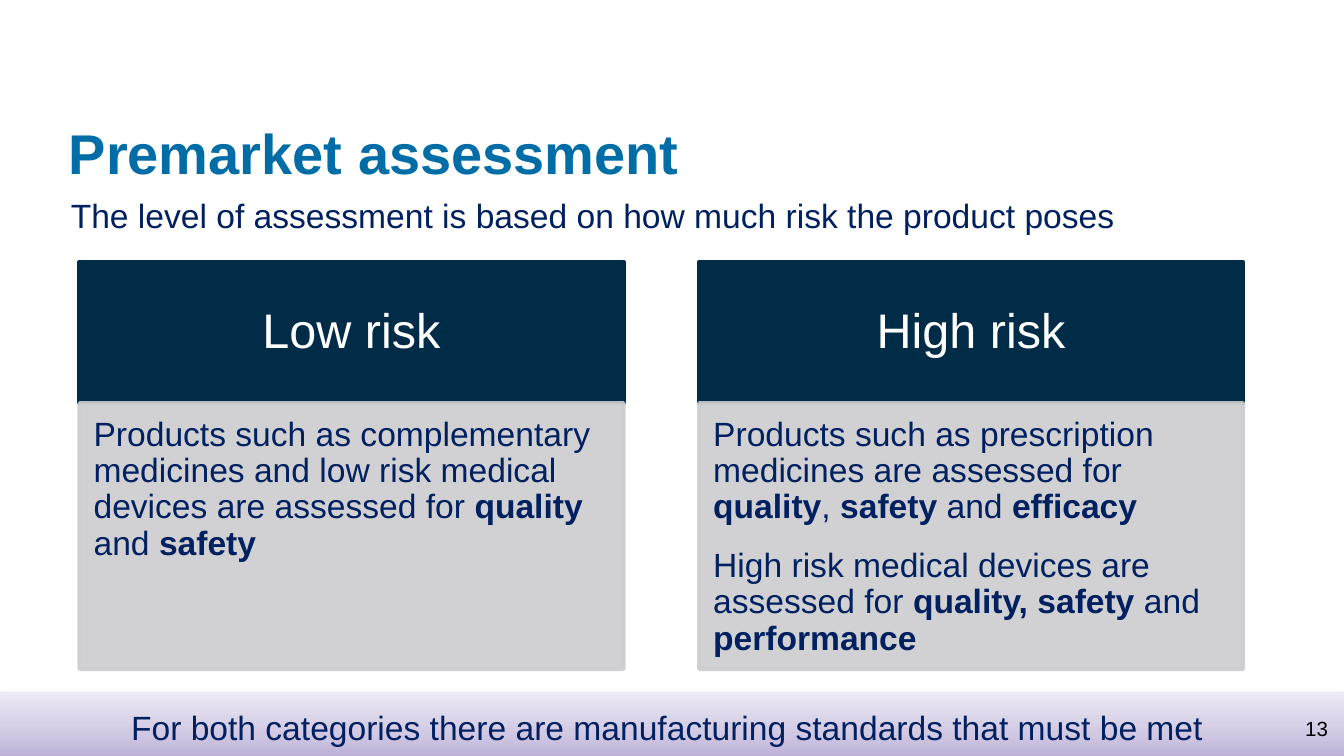
from lxml.etree import SubElement
from pptx import Presentation
from pptx.dml.color import RGBColor
from pptx.enum.shapes import MSO_SHAPE as Shape
from pptx.enum.text import MSO_ANCHOR as Anchor, PP_ALIGN as Align
from pptx.oxml.ns import qn
from pptx.util import Cm, Pt

BLUE = RGBColor(0x00, 0x6D, 0xA7)
NAVY = RGBColor(0x00, 0x20, 0x60)
DARK = RGBColor(0x00, 0x2C, 0x47)
GREY = RGBColor(0xCC, 0xCD, 0xCF)
WHITE = RGBColor(0xFF, 0xFF, 0xFF)
BLACK = RGBColor(0x00, 0x00, 0x00)
BAR_STOPS = [
    (0, RGBColor(0xBD, 0xB1, 0xD8)),
    (35, RGBColor(0xD1, 0xC9, 0xE3)),
    (100, RGBColor(0xED, 0xEA, 0xF5)),
]

SLIDE_W, SLIDE_H = 25.4, 14.29
CARD_X, CARD_Y, CARD_W, CARD_STEP = 1.5, 4.95, 10.29, 11.71
HEAD_H, BODY_H = 2.67, 5.03
BAR_Y = 13.08

# Paragraphs are lists of (text, bold) runs.
CARDS = [
    ("Low risk", [
        [("Products such as complementary medicines and low risk medical "
          "devices are assessed for ", False),
         ("quality", True), (" and ", False), ("safety", True)],
    ]),
    ("High risk", [
        [("Products such as prescription medicines are assessed for ", False),
         ("quality", True), (", ", False), ("safety", True),
         (" and ", False), ("efficacy", True)],
        [("High risk medical devices are assessed for ", False),
         ("quality, safety ", True), ("and ", False), ("performance", True)],
    ]),
]


def set_alpha(fill, percent):
    color = fill._xPr.find(qn("a:solidFill"))[0]
    SubElement(color, qn("a:alpha"), val=str(percent * 1000))


class Deck:
    font = "Arial"

    def __init__(self):
        self.prs = Presentation()
        self.prs.slide_width = Cm(SLIDE_W)
        self.prs.slide_height = Cm(SLIDE_H)
        self.slide = self.prs.slides.add_slide(self.prs.slide_layouts[5])

    def set_text(self, sp, paragraphs, size, color, bold=None,
                 align=Align.LEFT, anchor=Anchor.TOP, insets=(0, 0, 0, 0),
                 line=None, gap=0):
        tf = sp.text_frame
        tf.word_wrap = True
        tf.vertical_anchor = anchor
        (tf.margin_left, tf.margin_top,
         tf.margin_right, tf.margin_bottom) = map(Cm, insets)
        for i, runs in enumerate(paragraphs):
            p = tf.add_paragraph() if i else tf.paragraphs[0]
            p.alignment = align
            p.line_spacing = line
            p.space_before = Pt(gap if i else 0)
            p.font.name, p.font.size, p.font.bold = self.font, Pt(size), bold
            p.font.color.rgb = color
            for text, strong in runs:
                r = p.add_run()
                r.text = text
                if strong:
                    r.font.bold = True

    def title(self, text, x, y, w, h):
        sp = self.slide.shapes.title
        sp.left, sp.top, sp.width, sp.height = map(Cm, (x, y, w, h))
        self.set_text(sp, [[(text, False)]], 30, BLUE, bold=True,
                      anchor=Anchor.MIDDLE)

    def label(self, text, x, y, w, h, size, color, **style):
        sp = self.slide.shapes.add_textbox(*map(Cm, (x, y, w, h)))
        self.set_text(sp, [[(text, False)]], size, color, **style)

    def box(self, x, y, w, h):
        sp = self.slide.shapes.add_shape(Shape.RECTANGLE,
                                         *map(Cm, (x, y, w, h)))
        sp.shadow.inherit = False
        return sp

    def panel(self, x, y, w, h, color, alpha=None):
        sp = self.box(x, y, w, h)
        sp.line.width = Pt(2)
        for fill in (sp.fill, sp.line.fill):
            fill.solid()
            fill.fore_color.rgb = color
            if alpha:
                set_alpha(fill, alpha)
        return sp

    def card(self, x, heading, paragraphs):
        head = self.panel(x, CARD_Y, CARD_W, HEAD_H, DARK)
        self.set_text(head, [[(heading, False)]], 26, WHITE,
                      align=Align.CENTER, anchor=Anchor.MIDDLE,
                      insets=(0.5, 0.3, 0.5, 0.3), line=0.9)
        body = self.panel(x, CARD_Y + HEAD_H, CARD_W, BODY_H, GREY, alpha=90)
        self.set_text(body, paragraphs, 18, NAVY,
                      insets=(0.27, 0.27, 0.36, 0.4), line=0.9, gap=12)

    def footer_bar(self, text):
        sp = self.box(0, BAR_Y, SLIDE_W, SLIDE_H - BAR_Y)
        sp.line.fill.background()
        sp.fill.gradient()
        sp.fill.gradient_angle = 90
        props = sp._element.spPr
        stops = props.find(qn("a:gradFill")).find(qn("a:gsLst"))
        stops.clear()
        for position, color in BAR_STOPS:
            stop = SubElement(stops, qn("a:gs"), pos=str(position * 1000))
            SubElement(stop, qn("a:srgbClr"), val=str(color))
        shadow = SubElement(props.find(qn("a:effectLst")), qn("a:outerShdw"),
                            blurRad=str(Pt(3.1)), dist=str(Pt(1.6)),
                            dir="5400000", rotWithShape="0")
        tint = SubElement(shadow, qn("a:srgbClr"), val=str(BLACK))
        SubElement(tint, qn("a:alpha"), val="38000")
        self.set_text(sp, [[(text, False)]], 18, NAVY, align=Align.CENTER,
                      anchor=Anchor.MIDDLE, insets=(0.25, 0.13, 0.43, 0))


def main():
    deck = Deck()
    deck.title("Premarket assessment", 1.3, 2.13, 23, 1.5)
    for i, (heading, paragraphs) in enumerate(CARDS):
        deck.card(CARD_X + i * CARD_STEP, heading, paragraphs)
    deck.footer_bar("For both categories there are manufacturing standards "
                    "that must be met")
    deck.label("13", 18.8, 13.54, 6.3, 0.75, 11, BLACK, align=Align.RIGHT)
    deck.label("The level of assessment is based on how much risk the "
               "product poses", 1.09, 3.56, 20.8, 1.03, 18, NAVY,
               insets=(0.25, 0.13, 0.25, 0.13))
    deck.prs.save("out.pptx")


if __name__ == "__main__":
    main()
